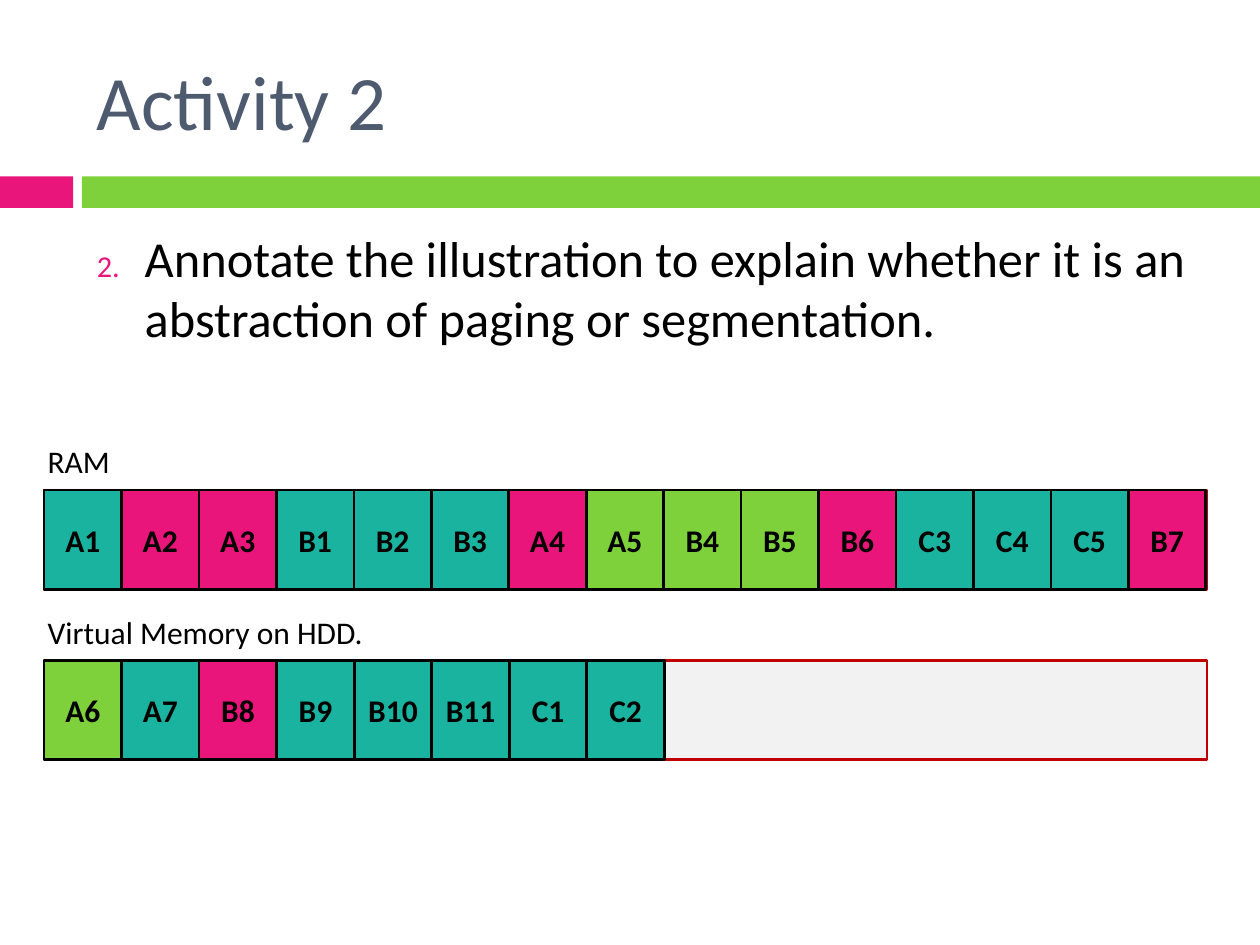
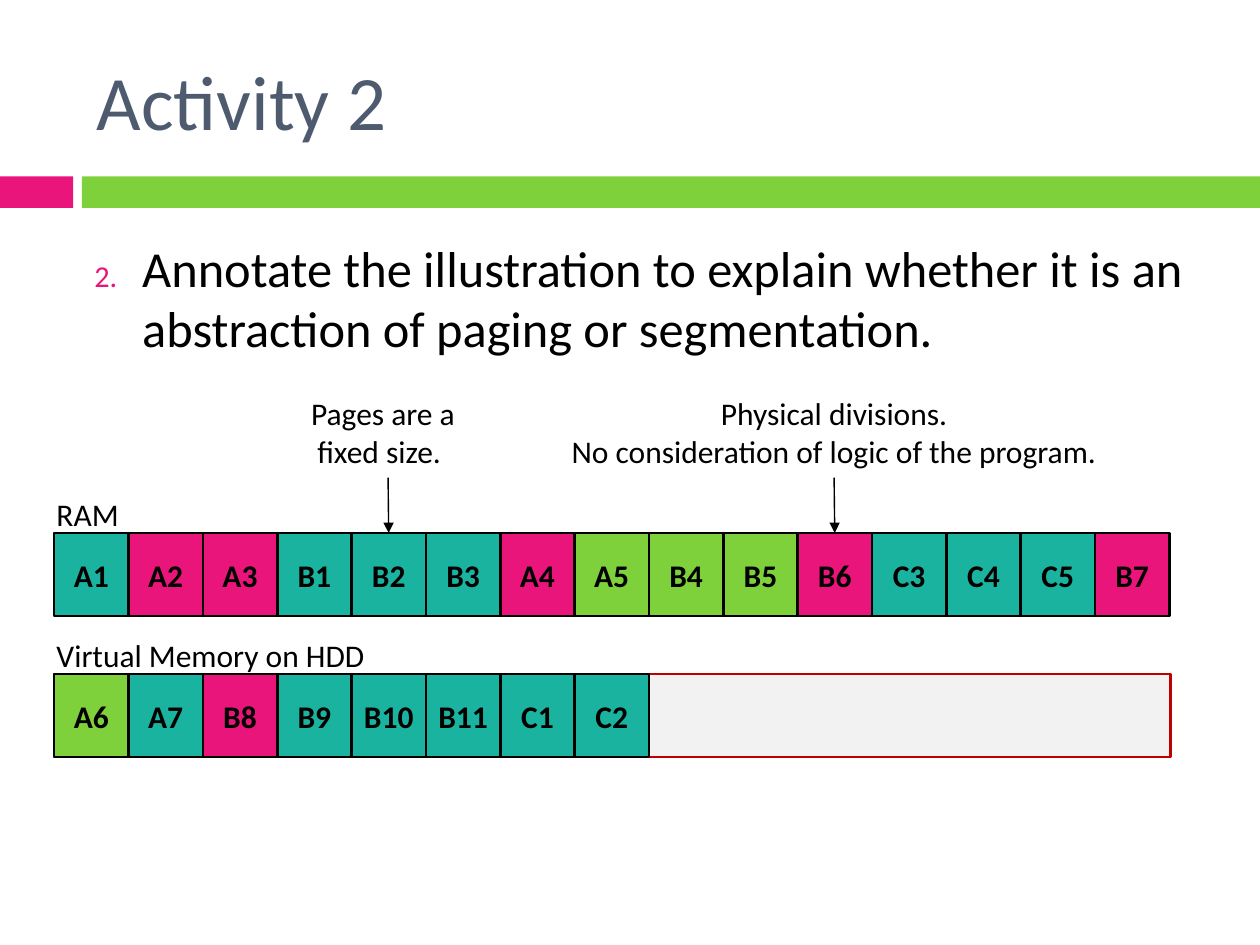
from dataclasses import dataclass
from typing import Optional

from lxml import etree
from pptx import Presentation
from pptx.dml.color import RGBColor
from pptx.enum.shapes import MSO_CONNECTOR, MSO_SHAPE
from pptx.enum.text import MSO_ANCHOR, PP_ALIGN
from pptx.oxml.ns import qn
from pptx.shapes.autoshape import Shape
from pptx.slide import Slide
from pptx.util import Emu, Pt

RECT = MSO_SHAPE.RECTANGLE
LINE = MSO_CONNECTOR.STRAIGHT
TOP, MIDDLE = MSO_ANCHOR.TOP, MSO_ANCHOR.MIDDLE
LEFT, CENTER = PP_ALIGN.LEFT, PP_ALIGN.CENTER
PX = 9144
SLOTS = 15


@dataclass(frozen=True)
class Theme:
    font: str = "Calibri"
    ink: str = "000000"
    slate: str = "4E5B6F"
    pink: str = "EA157A"
    green: str = "7FD13B"
    teal: str = "1AB39F"
    pale: str = "F2F2F2"
    red: str = "C00000"
    head: float = 44
    body: float = 28.8
    small: float = 18
    edge: float = 1.5
    thin: float = 0.79


@dataclass(frozen=True)
class Box:
    x: int
    y: int
    w: int
    h: int

    def emu(self) -> tuple[Emu, ...]:
        return tuple(Emu(n * PX) for n in (self.x, self.y, self.w, self.h))


@dataclass(frozen=True)
class Row:
    label: str
    spot: Box
    area: Box
    names: str
    frame: Optional[Box] = None


@dataclass(frozen=True)
class Note:
    lines: tuple[str, ...]
    box: Box
    cell: str
    align: PP_ALIGN
    shift: int = 0


@dataclass(frozen=True)
class Page:
    task: Box
    rows: tuple[Row, ...]
    notes: tuple[Note, ...] = ()


THEME = Theme()
TITLE = "Activity 2"
TASK = "Annotate the illustration to explain whether it is an abstraction of paging or segmentation."
RAM = "A1 A2 A3 B1 B2 B3 A4 A5 B4 B5 B6 C3 C4 C5 B7"
DISK = "A6 A7 B8 B9 B10 B11 C1 C2"
TINTS = {
    **dict.fromkeys("A2 A3 A4 B6 B7 B8".split(), THEME.pink),
    **dict.fromkeys("A5 A6 B4 B5".split(), THEME.green),
}
PAGES = (
    Page(
        Box(67, 175, 892, 116),
        (
            Row("RAM", Box(28, 346, 100, 43), Box(35, 389, 922, 79), RAM, Box(35, 389, 923, 79)),
            Row("Virtual Memory on HDD.", Box(28, 482, 300, 43), Box(35, 524, 923, 79), DISK,
                Box(35, 524, 923, 79)),
        ),
    ),
    Page(
        Box(65, 183, 892, 116),
        (
            Row("RAM", Box(35, 388, 100, 36), Box(43, 423, 885, 66), RAM),
            Row("Virtual Memory on HDD", Box(35, 500, 300, 36), Box(43, 535, 885, 66), DISK,
                Box(43, 535, 886, 66)),
        ),
        (
            Note(("Pages are a", "fixed size."), Box(237, 308, 142, 71), "B2", LEFT, 5),
            Note(("Physical divisions.", "No consideration of logic of the program."),
                 Box(440, 308, 444, 71), "B6", CENTER),
        ),
    ),
)


def write(shape: Shape, lines: tuple[str, ...], size: float, tint: str = THEME.ink,
          bold: bool = False, align: PP_ALIGN = LEFT, anchor: MSO_ANCHOR = TOP) -> None:
    frame = shape.text_frame
    frame.word_wrap = True
    frame.vertical_anchor = anchor
    for i, line in enumerate(lines):
        para = frame.add_paragraph() if i else frame.paragraphs[0]
        para.alignment = align
        run = para.add_run()
        run.text = line
        run.font.name = THEME.font
        run.font.size = Pt(size)
        run.font.bold = bold
        run.font.color.rgb = RGBColor.from_string(tint)


def block(slide: Slide, place: tuple[Emu, ...], fill: str, edge: Optional[str] = None) -> Shape:
    shape = slide.shapes.add_shape(RECT, *place)
    shape.shadow.inherit = False
    shape.fill.solid()
    shape.fill.fore_color.rgb = RGBColor.from_string(fill)
    if edge:
        shape.line.color.rgb = RGBColor.from_string(edge)
        shape.line.width = Pt(THEME.edge)
    else:
        shape.line.fill.background()
    return shape


def label(slide: Slide, box: Box, lines: tuple[str, ...], size: float = THEME.small,
          tint: str = THEME.ink, align: PP_ALIGN = LEFT, anchor: MSO_ANCHOR = TOP) -> Shape:
    shape = slide.shapes.add_textbox(*box.emu())
    write(shape, lines, size, tint, align=align, anchor=anchor)
    return shape


def base(slide: Slide) -> None:
    block(slide, Box(0, 140, 58, 25).emu(), THEME.pink)
    block(slide, Box(65, 140, 935, 25).emu(), THEME.green)
    label(slide, Box(67, 25, 892, 108), (TITLE,), THEME.head, THEME.slate, anchor=MIDDLE)


def task(slide: Slide, box: Box) -> None:
    para = label(slide, box, (TASK,), THEME.body).text_frame.paragraphs[0]
    para.space_before = Pt(7)
    props = para._p.get_or_add_pPr()
    props.set("marL", str(38 * PX))
    props.set("indent", str(-38 * PX))
    tint = etree.SubElement(props, qn("a:buClr"))
    etree.SubElement(tint, qn("a:srgbClr"), val=THEME.pink)
    etree.SubElement(props, qn("a:buSzPct"), val="60000")
    etree.SubElement(props, qn("a:buFont"), typeface=THEME.font)
    etree.SubElement(props, qn("a:buAutoNum"), type="arabicPeriod", startAt="2")


def cells(slide: Slide, row: Row) -> dict[str, Shape]:
    made = {}
    left, top, wide, high = row.area.emu()
    for i, name in enumerate(row.names.split()):
        place = (Emu(left + i * wide // SLOTS), top, Emu(wide // SLOTS), high)
        shape = block(slide, place, TINTS.get(name, THEME.teal), THEME.ink)
        shape.text_frame.margin_left = shape.text_frame.margin_right = 0
        write(shape, (name,), THEME.small, bold=True, align=CENTER, anchor=MIDDLE)
        made[name] = shape
    return made


def arrow(slide: Slide, start: Shape, end: Shape) -> None:
    line = slide.shapes.add_connector(LINE, 0, 0, 0, 0)
    line.begin_connect(start, 2)
    line.end_connect(end, 0)
    line.line.color.rgb = RGBColor.from_string(THEME.ink)
    line.line.width = Pt(THEME.thin)
    etree.SubElement(line.line._get_or_add_ln(), qn("a:tailEnd"), type="triangle")
    etree.SubElement(line._element.spPr, qn("a:effectLst"))


def draw(slide: Slide, page: Page) -> None:
    base(slide)
    task(slide, page.task)
    made = {}
    for row in page.rows:
        if row.frame:
            block(slide, row.frame.emu(), THEME.pale, THEME.red)
        label(slide, row.spot, (row.label,))
        made.update(cells(slide, row))
    for note in page.notes:
        text = label(slide, note.box, note.lines, align=note.align)
        if note.shift:
            last = text.text_frame.paragraphs[-1]
            last._p.get_or_add_pPr().set("marL", str(note.shift * PX))
        arrow(slide, text, made[note.cell])


def main() -> None:
    deck = Presentation()
    deck.slide_width, deck.slide_height = Emu(1000 * PX), Emu(750 * PX)
    for page in PAGES:
        draw(deck.slides.add_slide(deck.slide_layouts[6]), page)
    deck.save("out.pptx")


if __name__ == "__main__":
    main()
